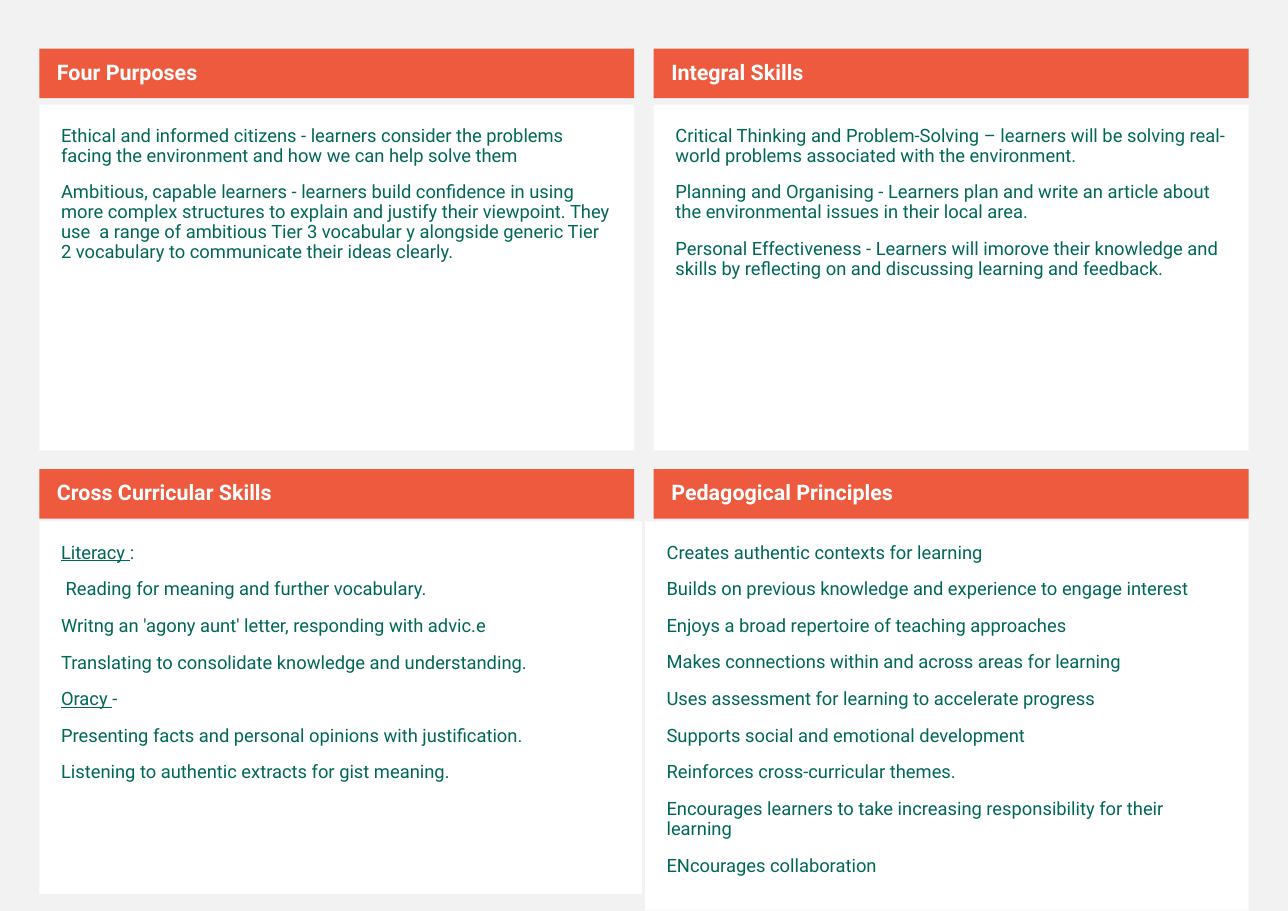
from pptx import Presentation
from pptx.dml.color import RGBColor
from pptx.enum.shapes import MSO_SHAPE
from pptx.enum.text import MSO_ANCHOR, PP_ALIGN
from pptx.util import Pt

RECTANGLE = MSO_SHAPE.RECTANGLE
TOP, MIDDLE = MSO_ANCHOR.TOP, MSO_ANCHOR.MIDDLE
LEFT = PP_ALIGN.LEFT

FONT = "Roboto"
GREY, WHITE, ORANGE, GREEN = "F2F2F2", "FFFFFF", "ED5A3E", "006758"

# Header grid
COLUMNS = (25.7, 427.2)
ROWS = (31.8, 306.6)
HEADER_WIDTH, HEADER_HEIGHT = 388.8, 32.4

# Each section: title, column, row, body box, paragraphs.
# A paragraph is a string, or a pair of underlined lead and plain rest.
SECTIONS = [
    ("Four Purposes", 0, 0, (25.7, 68.4, 388.8, 226), [
        "Ethical and informed citizens - learners consider the problems facing "
        "the environment and how we can help solve them",
        "Ambitious, capable learners - learners build confidence in using more "
        "complex structures to explain and justify their viewpoint. They use  a "
        "range of ambitious Tier 3 vocabular y alongside generic Tier 2 "
        "vocabulary to communicate their ideas clearly.",
    ]),
    ("Integral Skills", 1, 0, (427.2, 68.4, 388.8, 226), [
        "Critical Thinking and Problem-Solving – learners will be solving "
        "real-world problems associated with the environment.",
        "Planning and Organising - Learners plan and write an article "
        "about the environmental issues in their local area.",
        "Personal Effectiveness - Learners will imorove their knowledge "
        "and skills by reflecting on and discussing learning and feedback.",
    ]),
    ("Cross Curricular Skills", 0, 1, (25.7, 340.8, 393.8, 243.4), [
        ("Literacy ", ":"),
        " Reading for meaning and further vocabulary.",
        "Writng an 'agony aunt' letter, responding with advic.e",
        "Translating to consolidate knowledge and understanding.",
        ("Oracy ", "-"),
        "Presenting facts and personal opinions with justification.",
        "Listening to authentic extracts for gist meaning.",
    ]),
    ("Pedagogical Principles", 1, 1, (421.4, 340.8, 394.6, 254.2), [
        "Creates authentic contexts for learning",
        "Builds on previous knowledge and experience to engage interest",
        "Enjoys a broad repertoire of teaching approaches",
        "Makes connections within and across areas for learning",
        "Uses assessment for learning to accelerate progress",
        "Supports social and emotional development",
        "Reinforces cross-curricular themes.",
        "Encourages learners to take increasing responsibility for their learning",
        "ENcourages collaboration",
    ]),
]


def color(hex_string):
    return RGBColor.from_string(hex_string)


def add_box(slide, bounds, fill, margins, anchor):
    """Add a plain rectangle and return its text frame."""
    shape = slide.shapes.add_shape(RECTANGLE, *[Pt(length) for length in bounds])
    shape.shadow.inherit = False
    shape.fill.solid()
    shape.fill.fore_color.rgb = color(fill)
    shape.line.fill.background()
    frame = shape.text_frame
    frame.word_wrap = True
    frame.vertical_anchor = anchor
    frame.margin_left, frame.margin_top, frame.margin_right, frame.margin_bottom = [
        Pt(margin) for margin in margins]
    return frame


def style_paragraph(paragraph, size, font_color, bold=False):
    paragraph.alignment = LEFT
    paragraph.line_spacing = 0.9
    paragraph.space_before = Pt(11)
    paragraph.font.name = FONT
    paragraph.font.size = Pt(size)
    paragraph.font.bold = bold
    paragraph.font.color.rgb = color(font_color)


def add_header(slide, title, column, row):
    bounds = (COLUMNS[column], ROWS[row], HEADER_WIDTH, HEADER_HEIGHT)
    frame = add_box(slide, bounds, ORANGE, (11.5, 3.6, 7.2, 3.6), MIDDLE)
    paragraph = frame.paragraphs[0]
    paragraph.text = title
    style_paragraph(paragraph, 14, WHITE, bold=True)


def add_body(slide, bounds, texts):
    frame = add_box(slide, bounds, WHITE, (14.2, 14.2, 14.2, 14.2), TOP)
    for index, text in enumerate(texts):
        paragraph = frame.add_paragraph() if index else frame.paragraphs[0]
        style_paragraph(paragraph, 12, GREEN)
        lead, rest = ("", text) if isinstance(text, str) else text
        if lead:
            run = paragraph.add_run()
            run.text = lead
            run.font.underline = True
        paragraph.add_run().text = rest


def main():
    presentation = Presentation()
    presentation.slide_width, presentation.slide_height = Pt(841.7), Pt(595.4)
    slide = presentation.slides.add_slide(presentation.slide_layouts[6])

    # Background
    slide.background.fill.solid()
    slide.background.fill.fore_color.rgb = color(GREY)

    # Four titled sections
    for title, column, row, body_bounds, texts in SECTIONS:
        add_body(slide, body_bounds, texts)
        add_header(slide, title, column, row)

    presentation.save("out.pptx")


if __name__ == "__main__":
    main()
